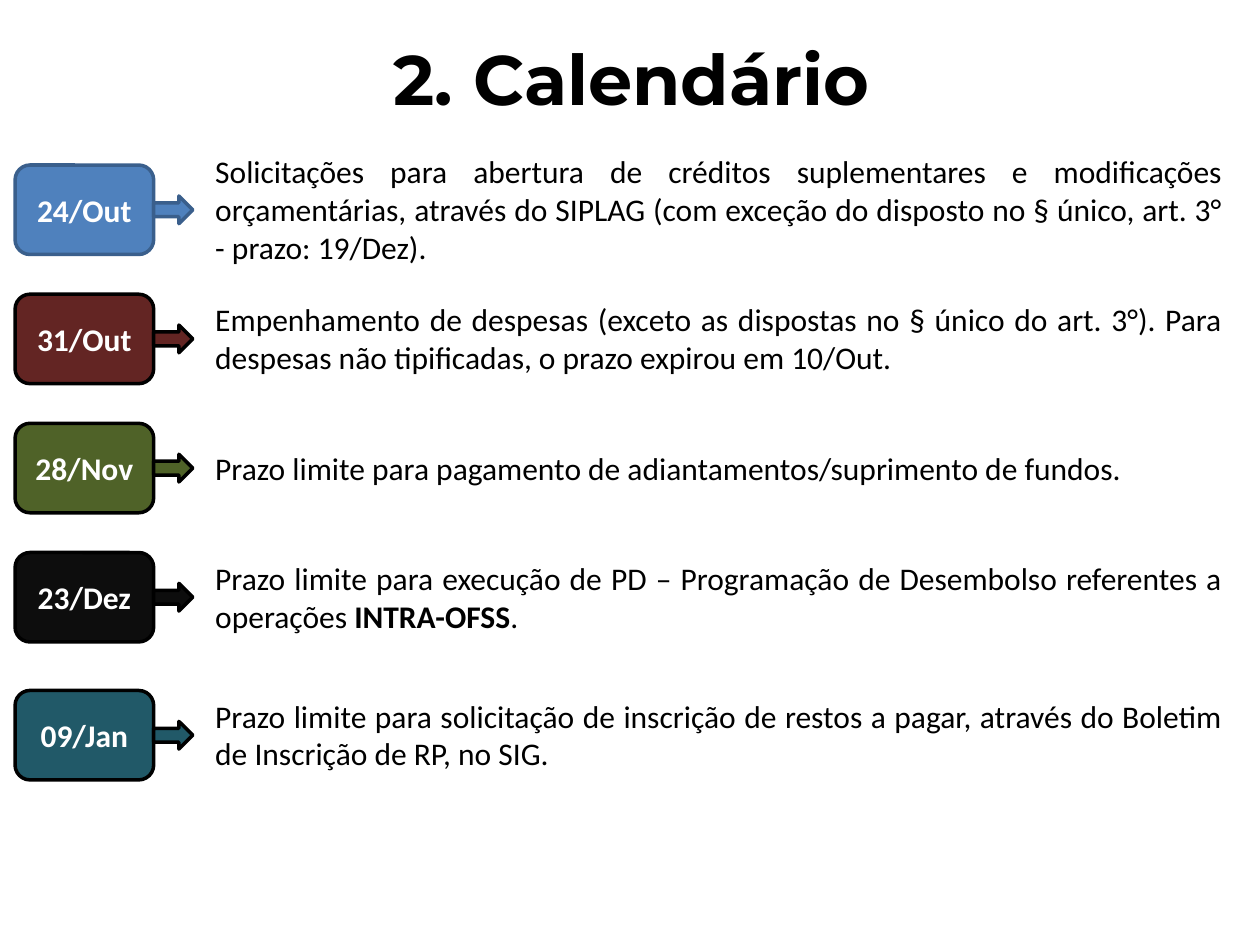
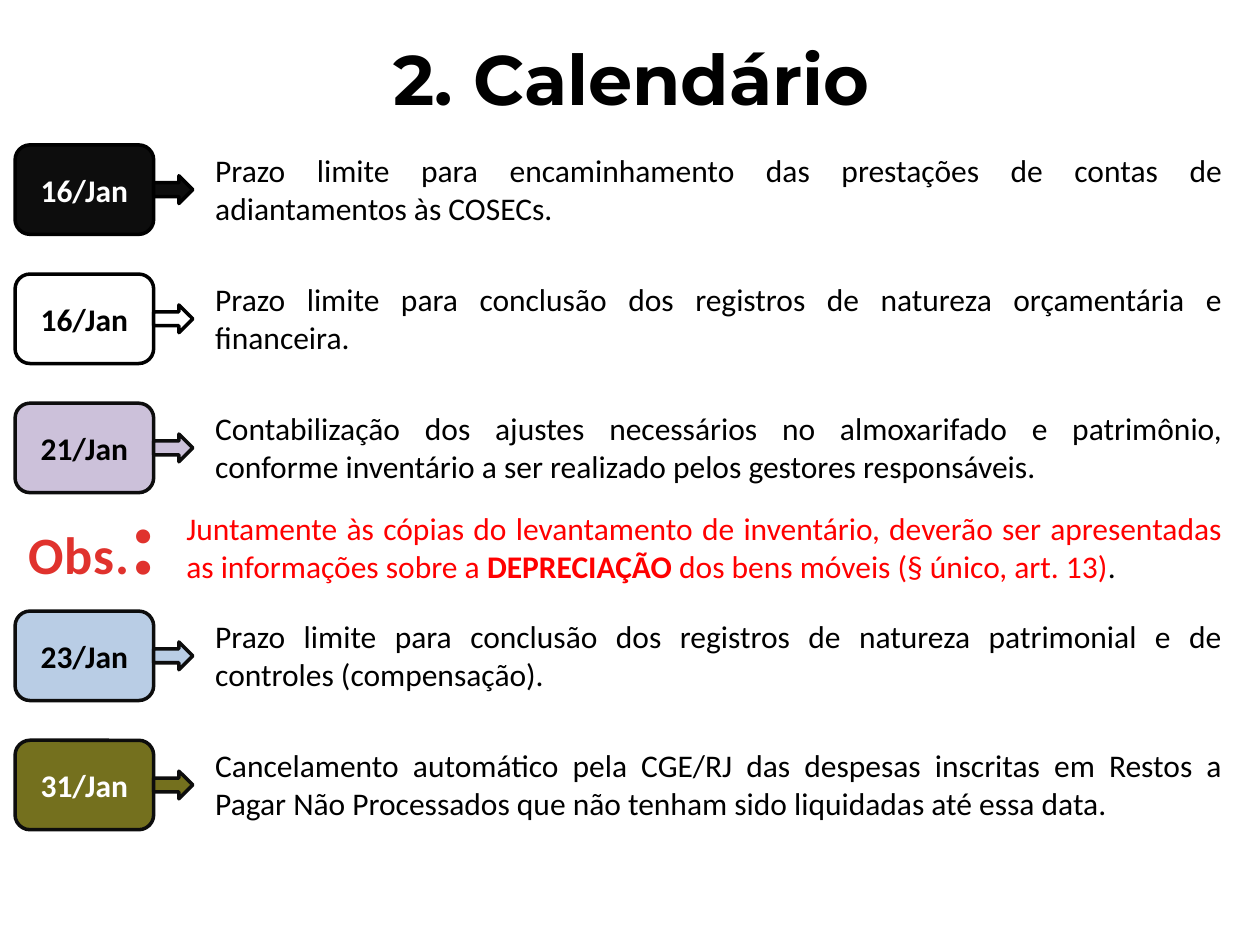
from dataclasses import dataclass

from lxml.etree import SubElement
from pptx import Presentation
from pptx.dml.color import RGBColor
from pptx.enum.shapes import MSO_SHAPE as Preset
from pptx.enum.text import MSO_ANCHOR as Anchor, MSO_AUTO_SIZE as AutoSize, PP_ALIGN as Align
from pptx.util import Inches, Pt

# The slide is a grid of 100 columns by 75 rows of square cells.
COLUMNS, ROWS = 100, 75
CELL = Inches(0.1)

BODY_FONT, TITLE_FONT = "Calibri", "Montserrat"
BLACK, WHITE, NEAR_BLACK = "000000", "FFFFFF", "0D0D0D"
RED, NOTE_RED = "FF0000", "E0322D"

BADGE_LEFT, BADGE_WIDTH, BADGE_HEIGHT = 1.2, 11, 7.1
ARROW_WIDTH, ARROW_HEIGHT = 3.1, 2.2
TEXT_LEFT, TEXT_RIGHT = 16.1, 98
ROW_PITCH = 10.25
LINE_HEIGHT, TEXT_MARGINS = 3.05, 1


@dataclass(frozen=True)
class Span:
    text: str
    size: float = 18
    color: str = BLACK
    bold: bool = False
    font: str = BODY_FONT
    spacing: float = 0


@dataclass(frozen=True)
class Box:
    left: float
    top: float
    width: float
    height: float

    def emu(self) -> list[int]:
        return [round(cells * CELL) for cells in (self.left, self.top, self.width, self.height)]


@dataclass(frozen=True)
class Deadline:
    date: str
    fill: str
    description: tuple[Span, ...]
    lines: int = 2
    outline: str = BLACK
    date_color: str = WHITE


@dataclass(frozen=True)
class Group:
    """Deadlines stacked at the regular pitch from a first row."""
    top: float
    deadlines: tuple[Deadline, ...]


def rgb(color: str) -> RGBColor:
    return RGBColor.from_string(color)


def write(shape, spans: tuple[Span, ...], align, anchor=Anchor.TOP, wrap: bool = True) -> None:
    frame = shape.text_frame
    frame.word_wrap = wrap
    frame.vertical_anchor = anchor
    paragraph = frame.paragraphs[0]
    paragraph.alignment = align
    for span in spans:
        run = paragraph.add_run()
        run.text = span.text
        font = run.font
        font.name, font.size, font.bold = span.font, Pt(span.size), span.bold
        font.color.rgb = rgb(span.color)
        if span.spacing:
            run._r.get_or_add_rPr().set("spc", str(round(span.spacing * 100)))


def add_text(slide, box: Box, spans: tuple[Span, ...], align=Align.JUSTIFY,
             anchor=Anchor.TOP, wrap: bool = True) -> None:
    shape = slide.shapes.add_textbox(*box.emu())
    write(shape, spans, align, anchor, wrap)
    shape.text_frame.auto_size = AutoSize.NONE


def add_outlined(slide, preset, box: Box, fill: str, outline: str):
    shape = slide.shapes.add_shape(preset, *box.emu())
    shape.shadow.inherit = False
    shape.fill.solid()
    shape.fill.fore_color.rgb = rgb(fill)
    shape.line.color.rgb = rgb(outline)
    shape.line.width = Pt(2)
    return shape


def add_deadline(slide, top: float, deadline: Deadline) -> None:
    """Draw a date badge, its arrow and its description, centred on one row."""
    middle = top + BADGE_HEIGHT / 2
    badge = add_outlined(slide, Preset.ROUNDED_RECTANGLE,
                         Box(BADGE_LEFT, top, BADGE_WIDTH, BADGE_HEIGHT),
                         deadline.fill, deadline.outline)
    write(badge, (Span(deadline.date, color=deadline.date_color, bold=True),),
          Align.CENTER, Anchor.MIDDLE)
    add_outlined(slide, Preset.RIGHT_ARROW,
                 Box(BADGE_LEFT + BADGE_WIDTH, middle - ARROW_HEIGHT / 2,
                     ARROW_WIDTH, ARROW_HEIGHT),
                 deadline.fill, deadline.outline)
    height = deadline.lines * LINE_HEIGHT + TEXT_MARGINS
    add_text(slide, Box(TEXT_LEFT, middle - height / 2, TEXT_RIGHT - TEXT_LEFT, height),
             deadline.description)


def add_calendar_slide(presentation, groups: tuple[Group, ...]):
    slide = presentation.slides.add_slide(presentation.slide_layouts[6])
    add_text(slide, Box(5.1, 1.5, 90, 9.3),
             (Span("2. Calendário", 40, bold=True, font=TITLE_FONT),),
             Align.CENTER, Anchor.MIDDLE)
    for group in groups:
        for index, deadline in enumerate(group.deadlines):
            add_deadline(slide, group.top + index * ROW_PITCH, deadline)
    return slide


def add_inventory_note(slide) -> None:
    add_text(slide, Box(BADGE_LEFT, 37.6, 12.3, 10.1),
             (Span("Obs.", 30, NOTE_RED, True, spacing=0.5),
              Span(":", 54, NOTE_RED, True, spacing=0.5)),
             Align.CENTER, wrap=False)
    add_text(slide, Box(13.8, 39.9, TEXT_RIGHT - 13.8, 7.1),
             (Span("Juntamente às cópias do levantamento de inventário, deverão ser "
                   "apresentadas as informações sobre a ", color=RED),
              Span("DEPRECIAÇÃO", color=RED, bold=True),
              Span(" dos bens móveis (§ único, art. 13)", color=RED),
              Span(".")))


FIRST_DEADLINES = (
    Group(13.1, (
        Deadline("24/Out", "4F81BD", (Span(
            "Solicitações para abertura de créditos suplementares e modificações "
            "orçamentárias, através do SIPLAG (com exceção do disposto no § único, "
            "art. 3° - prazo: 19/Dez)."),), lines=3, outline="3A5F8C"),
        Deadline("31/Out", "632523", (Span(
            "Empenhamento de despesas (exceto as dispostas no § único do art. 3°). "
            "Para despesas não tipificadas, o prazo expirou em 10/Out."),)),
        Deadline("28/Nov", "4F6228", (Span(
            "Prazo limite para pagamento de adiantamentos/suprimento de fundos."),), lines=1),
        Deadline("23/Dez", NEAR_BLACK, (
            Span("Prazo limite para execução de PD – Programação de Desembolso "
                 "referentes a operações "),
            Span("INTRA-OFSS", bold=True),
            Span("."))),
    )),
    Group(54.8, (
        Deadline("09/Jan", "215968", (Span(
            "Prazo limite para solicitação de inscrição de restos a pagar, através do "
            "Boletim de Inscrição de RP, no SIG."),)),
    )),
)

JANUARY_DEADLINES = (
    Group(11.5, (
        Deadline("16/Jan", NEAR_BLACK, (Span(
            "Prazo limite para encaminhamento das prestações de contas de "
            "adiantamentos às COSECs."),)),
        Deadline("16/Jan", WHITE, (Span(
            "Prazo limite para conclusão dos registros de natureza orçamentária e "
            "financeira."),), date_color=BLACK),
        Deadline("21/Jan", "CCC1DA", (Span(
            "Contabilização dos ajustes necessários no almoxarifado e patrimônio, "
            "conforme inventário a ser realizado pelos gestores responsáveis."),),
            outline=NEAR_BLACK, date_color=BLACK),
    )),
    Group(48.5, (
        Deadline("23/Jan", "B9CDE5", (Span(
            "Prazo limite para conclusão dos registros de natureza patrimonial e de "
            "controles (compensação)."),), outline=NEAR_BLACK, date_color=BLACK),
        Deadline("31/Jan", "74701E", (Span(
            "Cancelamento automático pela CGE/RJ das despesas inscritas em Restos a "
            "Pagar Não Processados que não tenham sido liquidadas até essa data."),),
            outline=NEAR_BLACK),
    )),
)


def main() -> None:
    presentation = Presentation()
    presentation.slide_width, presentation.slide_height = COLUMNS * CELL, ROWS * CELL
    add_calendar_slide(presentation, FIRST_DEADLINES)
    add_inventory_note(add_calendar_slide(presentation, JANUARY_DEADLINES))
    presentation.save("out.pptx")


if __name__ == "__main__":
    main()
